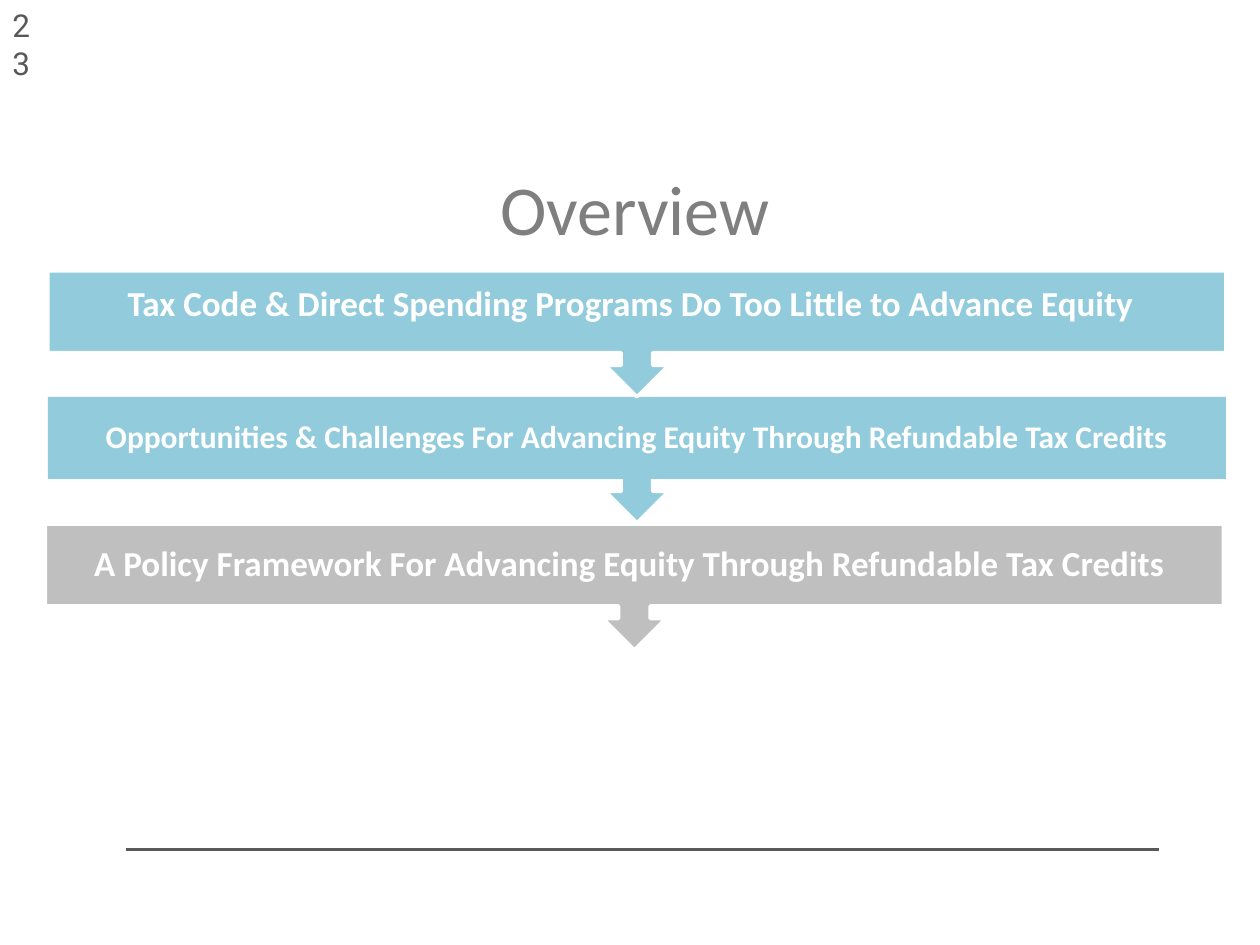
"""Build the overview slide with its three-step agenda."""
import dataclasses

import pptx
import pptx.dml.color
import pptx.enum.shapes
import pptx.enum.text
import pptx.oxml
import pptx.oxml.ns
import pptx.util

Inches = pptx.util.Inches
Alignment = pptx.enum.text.PP_ALIGN
Anchor = pptx.enum.text.MSO_ANCHOR


def rgb(value):
    return pptx.dml.color.RGBColor.from_string(value)


@dataclasses.dataclass(frozen=True)
class Theme:
    font: str = "Calibri"
    number_font: str = "Roboto"
    blue: str = "92CCDC"
    gray: str = "BFBFBF"
    white: str = "FFFFFF"
    title_color: str = "7F7F7F"
    rule_color: str = "595959"
    number_color: str = "58585B"
    title_size: int = 40
    large_size: int = 20
    body_size: int = 18


class SlideBuilder:
    def __init__(self, slide, theme):
        self.slide = slide
        self.theme = theme

    def set_text(self, shape, text, font, size, color, alignment, anchor, bold=False):
        frame = shape.text_frame
        frame.word_wrap = True
        frame.auto_size = pptx.enum.text.MSO_AUTO_SIZE.NONE
        frame.vertical_anchor = anchor
        frame.text = text
        paragraph = frame.paragraphs[0]
        paragraph.alignment = alignment
        paragraph.font.name = font
        paragraph.font.size = pptx.util.Pt(size)
        paragraph.font.bold = bold
        paragraph.font.color.rgb = rgb(color)
        return paragraph

    def title(self, text, left, top, width, height):
        shape = self.slide.shapes.title
        shape.left, shape.top = Inches(left), Inches(top)
        shape.width, shape.height = Inches(width), Inches(height)
        self.set_text(shape, text, self.theme.font, self.theme.title_size,
                      self.theme.title_color, Alignment.CENTER, Anchor.TOP)

    def rule(self, left, right, top):
        connector = self.slide.shapes.add_connector(
            pptx.enum.shapes.MSO_CONNECTOR.STRAIGHT,
            Inches(left), Inches(top), Inches(right), Inches(top))
        connector.line.color.rgb = rgb(self.theme.rule_color)
        connector.line.width = pptx.util.Pt(1.5)
        properties = connector._element.spPr
        properties.append(pptx.oxml.parse_xml(
            f"<a:effectLst {pptx.oxml.ns.nsdecls('a')}/>"))

    def callout(self, left, top, width, height, color):
        shape = self.slide.shapes.add_shape(
            pptx.enum.shapes.MSO_SHAPE.DOWN_ARROW_CALLOUT,
            Inches(left), Inches(top), Inches(width), Inches(height))
        for index, value in enumerate((0.25, 0.25, 0.25, 0.65)):
            shape.adjustments[index] = value
        shape.shadow.inherit = False
        shape.fill.solid()
        shape.fill.fore_color.rgb = rgb(color)
        shape.line.color.rgb = rgb(self.theme.white)
        shape.line.width = pptx.util.Pt(2)

    def label(self, text, left, top, width, height, size, fill=None):
        shape = self.slide.shapes.add_textbox(
            Inches(left), Inches(top), Inches(width), Inches(height))
        if fill:
            shape.fill.solid()
            shape.fill.fore_color.rgb = rgb(fill)
        paragraph = self.set_text(shape, text, self.theme.font, size, self.theme.white,
                                  Alignment.CENTER, Anchor.MIDDLE, bold=True)
        paragraph.line_spacing = 0.9

    def page_number(self, text, left, top, width, height):
        shape = self.slide.shapes.add_textbox(
            Inches(left), Inches(top), Inches(width), Inches(height))
        self.set_text(shape, text, self.theme.number_font, self.theme.body_size,
                      self.theme.number_color, Alignment.LEFT, Anchor.TOP)


def main():
    presentation = pptx.Presentation()
    presentation.slide_width = Inches(10)
    presentation.slide_height = Inches(7.5)
    theme = Theme()
    slide = presentation.slides.add_slide(presentation.slide_layouts[5])
    builder = SlideBuilder(slide, theme)

    builder.rule(1, 9.2, 6.74)
    builder.title("Overview", 0.79, 1.26, 8.5, 0.62)

    step_width = 9.35
    steps = (
        ("A Policy Framework For Advancing Equity Through Refundable Tax Credits",
         0.36, 0.32, 4.16, 0.65, theme.large_size, theme.gray, None),
        ("Opportunities & Challenges For Advancing Equity Through Refundable Tax Credits",
         0.38, 0.38, 3.15, 0.65, theme.body_size, theme.blue, theme.blue),
        ("Tax Code & Direct Spending Programs Do Too Little to Advance Equity",
         0.38, 0.33, 2.15, 0.55, theme.large_size, theme.blue, None),
    )
    for text, left, label_left, top, label_height, size, color, label_fill in steps:
        builder.callout(left, top, step_width, 1, color)
        builder.label(text, label_left, top, step_width, label_height, size, label_fill)

    builder.page_number("23", 0, 0, 0.34, 0.4)
    presentation.save("out.pptx")


if __name__ == "__main__":
    main()
